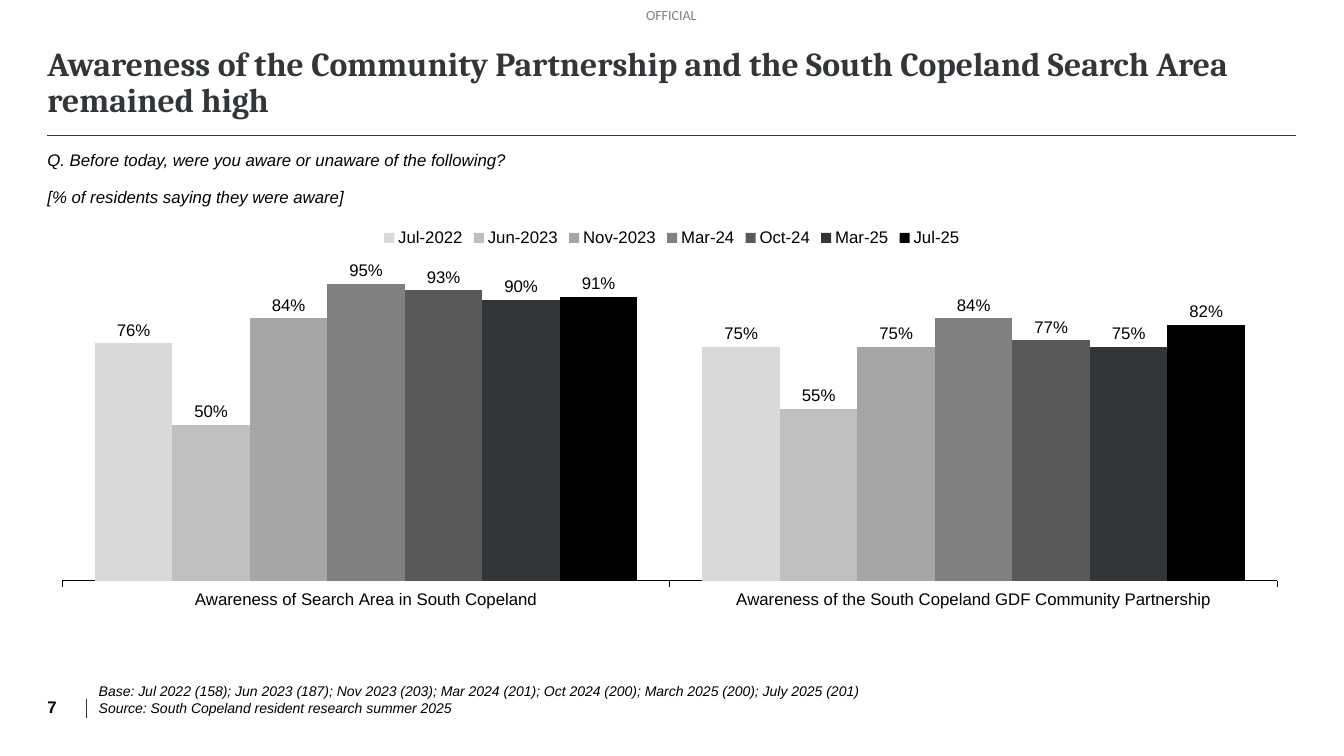
from lxml.etree import SubElement
from pptx import Presentation
from pptx.chart.data import CategoryChartData
from pptx.dml.color import RGBColor
from pptx.enum.chart import XL_CHART_TYPE, XL_LABEL_POSITION, XL_LEGEND_POSITION, XL_TICK_MARK
from pptx.enum.shapes import MSO_CONNECTOR
from pptx.enum.text import MSO_ANCHOR
from pptx.oxml import parse_xml
from pptx.oxml.ns import nsdecls, qn
from pptx.util import Pt

BLACK = RGBColor(0x00, 0x00, 0x00)
SLATE = RGBColor(0x32, 0x36, 0x38)
MARKING_GREY = RGBColor(0x80, 0x80, 0x80)

LEFT = 33.84
CONTENT_WIDTH = 892.08

CATEGORIES = [
    "Awareness of Search Area in South Copeland",
    "Awareness of the South Copeland GDF Community Partnership",
]
WAVES = [
    ("Jul-2022", (0.76, 0.75), RGBColor(0xD9, 0xD9, 0xD9)),
    ("Jun-2023", (0.50, 0.55), RGBColor(0xBF, 0xBF, 0xBF)),
    ("Nov-2023", (0.84, 0.75), RGBColor(0xA6, 0xA6, 0xA6)),
    ("Mar-24", (0.95, 0.84), RGBColor(0x80, 0x80, 0x80)),
    ("Oct-24", (0.93, 0.77), RGBColor(0x59, 0x59, 0x59)),
    ("Mar-25", (0.90, 0.75), SLATE),
    ("Jul-25", (0.91, 0.82), BLACK),
]
PLOT_AREA = {"x": 0.012, "y": 0.113, "w": 0.973, "h": 0.695}


def set_font(font, size, color=BLACK, name="Arial", bold=False, italic=False):
    font.name = name
    font.size = Pt(size)
    font.bold = bold
    font.italic = italic
    font.color.rgb = color


def add_text(slide, box, text, size, anchor=MSO_ANCHOR.TOP, line_spacing=1.0,
             space_after=0, wrap=True, **style):
    shape = slide.shapes.add_textbox(*map(Pt, box))
    text_frame = shape.text_frame
    text_frame.margin_left = text_frame.margin_right = 0
    text_frame.margin_top = text_frame.margin_bottom = 0
    text_frame.word_wrap = wrap
    text_frame.vertical_anchor = anchor
    text_frame.text = text
    for paragraph in text_frame.paragraphs:
        paragraph.line_spacing = line_spacing
        paragraph.space_after = Pt(space_after)
        for run in paragraph.runs:
            set_font(run.font, size, **style)


def add_rule(slide, start, end, width):
    connector = slide.shapes.add_connector(MSO_CONNECTOR.STRAIGHT, *map(Pt, start + end))
    connector.line.color.rgb = SLATE
    connector.line.width = Pt(width)
    SubElement(connector._element.spPr, qn("a:effectLst"))


def add_header(slide, left, top, width):
    add_text(slide, (461.5, 5, 38.2, 12.2), "OFFICIAL", 10,
             wrap=False, color=MARKING_GREY, name="Calibri")
    add_text(slide, (left, top, 865.4, 38.9),
             "Awareness of the Community Partnership and the South Copeland Search Area remained high",
             24, MSO_ANCHOR.BOTTOM, 0.9, color=SLATE, name="Cambria", bold=True)
    rule_top = top + 49.7
    add_rule(slide, (left, rule_top), (left + width, rule_top), 0.75)


def add_question(slide, left, top, width, height):
    add_text(slide, (left, top, width, height),
             "Q. Before today, were you aware or unaware of the following?\n"
             "[% of residents saying they were aware]",
             12, line_spacing=1.13, space_after=10, italic=True)


def set_plot_layout(chart):
    plot_area = chart._chartSpace.chart.plotArea
    for layout in plot_area.findall(qn("c:layout")):
        plot_area.remove(layout)
    modes = "".join(f'<c:{side}Mode val="edge"/>' for side in "xy")
    sizes = "".join(f'<c:{key} val="{value}"/>' for key, value in PLOT_AREA.items())
    plot_area.insert(0, parse_xml(
        f'<c:layout {nsdecls("c")}><c:manualLayout><c:layoutTarget val="inner"/>'
        f'{modes}{sizes}</c:manualLayout></c:layout>'))


def add_awareness_chart(slide, left, top, width, height):
    chart_data = CategoryChartData(number_format="0%")
    chart_data.categories = CATEGORIES
    for name, values, _ in WAVES:
        chart_data.add_series(name, values)
    chart = slide.shapes.add_chart(XL_CHART_TYPE.COLUMN_CLUSTERED,
                                   *map(Pt, (left, top, width, height)), chart_data).chart
    set_font(chart.font, 10)
    chart.has_title = False
    chart.has_legend = True
    chart.legend.position = XL_LEGEND_POSITION.TOP
    chart.legend.include_in_layout = False
    set_font(chart.legend.font, 12)

    category_axis = chart.category_axis
    category_axis.major_tick_mark = XL_TICK_MARK.OUTSIDE
    category_axis.format.line.color.rgb = BLACK
    category_axis.format.line.width = Pt(0.75)
    set_font(category_axis.tick_labels.font, 12)

    value_axis = chart.value_axis
    value_axis.minimum_scale = 0
    value_axis.maximum_scale = 1
    value_axis.major_unit = 0.25
    value_axis.has_major_gridlines = False
    value_axis.visible = False

    plot = chart.plots[0]
    plot.gap_width = 84
    plot.overlap = 0
    plot.vary_by_categories = False
    for series, (_, _, color) in zip(plot.series, WAVES):
        series.format.fill.solid()
        series.format.fill.fore_color.rgb = color
        labels = series.data_labels
        labels.show_value = True
        labels.number_format = "0%"
        labels.number_format_is_linked = False
        labels.position = XL_LABEL_POSITION.OUTSIDE_END
        set_font(labels.font, 12)
    set_plot_layout(chart)


def add_footer(slide, left, top, height):
    add_text(slide, (left, top, 22.3, height), "7", 12, MSO_ANCHOR.BOTTOM, bold=True)
    divider_left = left + 28.1
    add_rule(slide, (divider_left, top + 13), (divider_left, top + 26.7), 0.5)
    add_text(slide, (left + 36.7, top, 562.3, height),
             "Base: Jul 2022 (158); Jun 2023 (187); Nov 2023 (203); Mar 2024 (201); "
             "Oct 2024 (200); March 2025 (200); July 2025 (201)\n"
             "Source: South Copeland resident research summer 2025",
             10, MSO_ANCHOR.BOTTOM, italic=True)


def main():
    presentation = Presentation()
    presentation.slide_width = Pt(960)
    presentation.slide_height = Pt(540)
    slide = presentation.slides.add_slide(presentation.slide_layouts[6])
    add_header(slide, LEFT, 46.8, CONTENT_WIDTH)
    add_question(slide, LEFT, 105.1, 907.9, 31)
    add_awareness_chart(slide, LEFT, 155.5, CONTENT_WIDTH, 321.1)
    add_footer(slide, LEFT, 486, 25.9)
    presentation.save("out.pptx")


if __name__ == "__main__":
    main()
